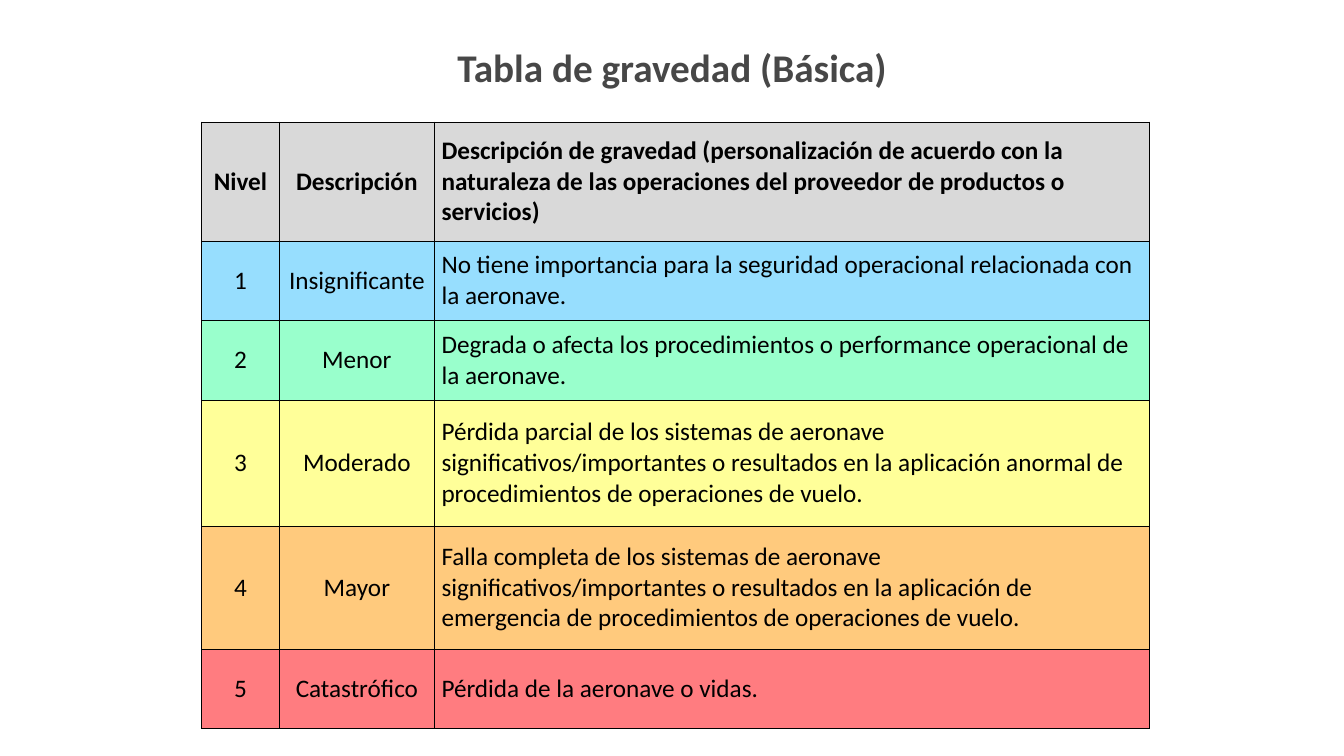
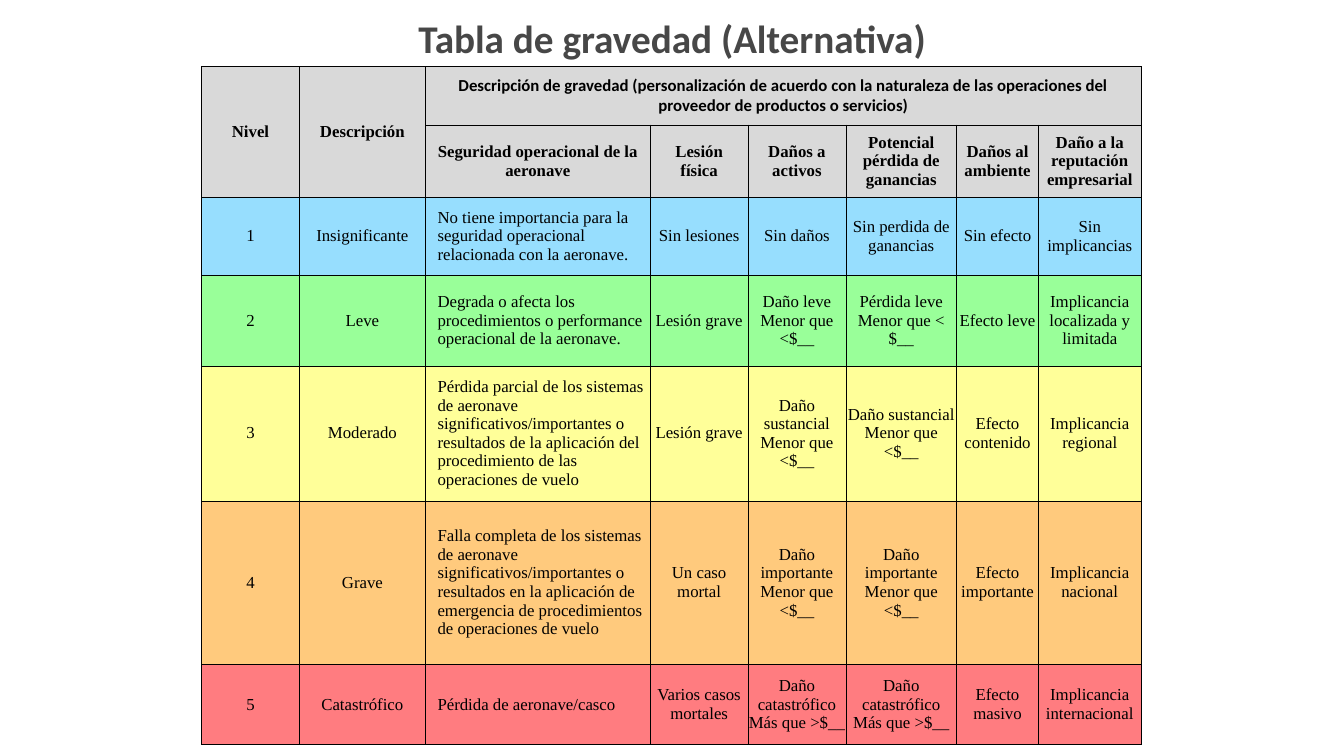
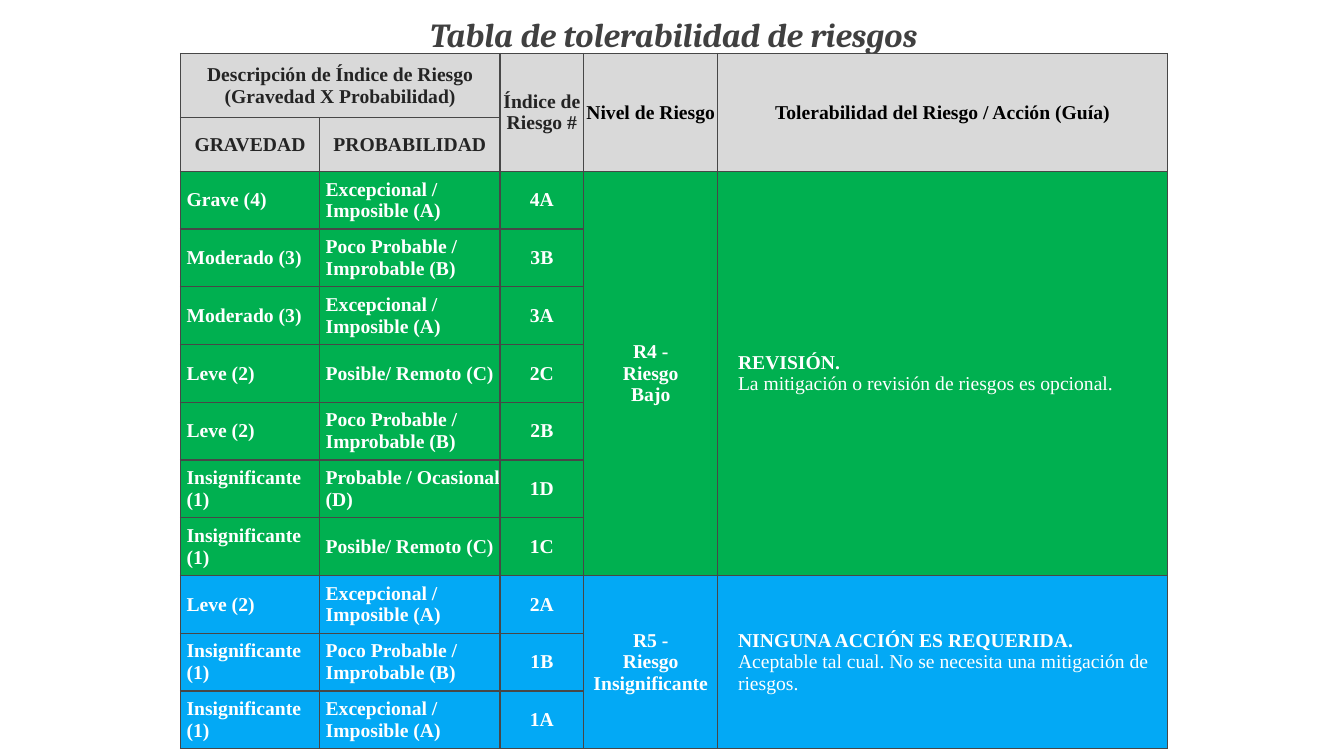
from pptx import Presentation
from pptx.dml.color import RGBColor
from pptx.enum.text import MSO_ANCHOR, MSO_AUTO_SIZE, PP_ALIGN
from pptx.oxml import parse_xml
from pptx.oxml.ns import nsdecls
from pptx.util import Inches, Pt

BLACK = RGBColor(0x00, 0x00, 0x00)
WHITE = RGBColor(0xFF, 0xFF, 0xFF)
TITLE_GRAY = RGBColor(0x47, 0x47, 0x47)
DARK_GRAY = RGBColor(0x40, 0x40, 0x40)
HEAD_TEXT = RGBColor(0x24, 0x24, 0x24)
HEAD_FILL = RGBColor(0xD9, 0xD9, 0xD9)
SKY = RGBColor(0x97, 0xDE, 0xFE)
MINT = RGBColor(0x99, 0xFF, 0xCC)
LIGHT_GREEN = RGBColor(0x99, 0xFF, 0x99)
YELLOW = RGBColor(0xFF, 0xFF, 0x99)
ORANGE = RGBColor(0xFF, 0xCA, 0x7D)
RED = RGBColor(0xFF, 0x7C, 0x80)
GREEN = RGBColor(0x00, 0xB0, 0x50)
BLUE = RGBColor(0x03, 0xA9, 0xF5)

prs = Presentation()
prs.slide_width = Inches(13.33)
prs.slide_height = Inches(7.5)


def add_titled_slide(title, left, top, width, height):
    s = prs.slides.add_slide(prs.slide_layouts[5])
    sp = s.shapes.title
    sp.left, sp.top = Inches(left), Inches(top)
    sp.width, sp.height = Inches(width), Inches(height)
    tf = sp.text_frame
    tf.text = title
    tf.auto_size = MSO_AUTO_SIZE.NONE
    p = tf.paragraphs[0]
    p.alignment = PP_ALIGN.CENTER
    p.font.name = "Calibri"
    p.font.size = Pt(28)
    p.font.bold = True
    p.font.color.rgb = TITLE_GRAY
    return s


def add_grid(s, left, top, widths, heights, rows, fills, font, size, indents, line_color, line_width):
    tbl = s.shapes.add_table(len(heights), len(widths), Inches(left), Inches(top),
                             Inches(sum(widths)), Inches(sum(heights))).table
    tbl.first_row = False
    tbl.horz_banding = False
    for col, width in zip(tbl.columns, widths):
        col.width = Inches(width)
    for row, height, texts, fill in zip(tbl.rows, heights, rows, fills):
        row.height = Inches(height)
        head = fill == HEAD_FILL
        for c, (cell, text) in enumerate(zip(row.cells, texts)):
            indent = 0 if head else indents.get(c, 0)
            cell.margin_left = Inches(indent)
            cell.margin_right = cell.margin_top = cell.margin_bottom = 0
            cell.vertical_anchor = MSO_ANCHOR.MIDDLE
            tcPr = cell._tc.get_or_add_tcPr()
            for side in "LRTB":
                tcPr.append(parse_xml(
                    f'<a:ln{side} {nsdecls("a")} w="{Pt(line_width)}"><a:solidFill>'
                    f'<a:srgbClr val="{line_color}"/></a:solidFill></a:ln{side}>'))
            cell.fill.solid()
            cell.fill.fore_color.rgb = fill
            p = cell.text_frame.paragraphs[0]
            p.text = text
            p.alignment = PP_ALIGN.LEFT if indent else PP_ALIGN.CENTER
            p.font.name = font
            p.font.size = Pt(size)
            p.font.bold = head
            p.font.color.rgb = BLACK
    return tbl


s = add_titled_slide("Tabla de gravedad (Básica)", 2.38, 0.38, 8.57, 0.57)
rows = [
    ("Nivel", "Descripción",
     "Descripción de gravedad (personalización de acuerdo con la naturaleza de las "
     "operaciones del proveedor de productos o servicios)"),
    ("1", "Insignificante",
     "No tiene importancia para la seguridad operacional relacionada con la aeronave."),
    ("2", "Menor",
     "Degrada o afecta los procedimientos o performance operacional de la aeronave."),
    ("3", "Moderado",
     "Pérdida parcial de los sistemas de aeronave significativos/importantes o resultados "
     "en la aplicación anormal de procedimientos de operaciones de vuelo."),
    ("4", "Mayor",
     "Falla completa de los sistemas de aeronave significativos/importantes o resultados "
     "en la aplicación de emergencia de procedimientos de operaciones de vuelo."),
    ("5", "Catastrófico", "Pérdida de la aeronave o vidas."),
]
tbl = add_grid(s, 2, 1.21, [0.77, 1.54, 7.09], [1.18, 0.79, 0.79, 1.25, 1.22, 0.79], rows,
               [HEAD_FILL, SKY, MINT, YELLOW, ORANGE, RED], "Calibri", 18, {2: 0.07}, BLACK, 0.5)
cell = tbl.cell(0, 2)
cell.margin_left = Inches(0.07)
cell.text_frame.paragraphs[0].alignment = PP_ALIGN.LEFT

s = add_titled_slide("Tabla de gravedad (Alternativa)", 2.38, 0.09, 8.57, 0.57)
rows = [
    ("Nivel", "Descripción",
     "Descripción de gravedad (personalización de acuerdo con la naturaleza de las "
     "operaciones del proveedor de productos o servicios)", "", "", "", "", ""),
    ("", "", "Seguridad operacional de la\naeronave", "Lesión\nfísica", "Daños a\nactivos",
     "Potencial\npérdida de\nganancias", "Daños al\nambiente",
     "Daño a la\nreputación\nempresarial"),
    ("1", "Insignificante",
     "No tiene importancia para la\nseguridad operacional relacionada con la aeronave.",
     "Sin lesiones", "Sin daños", "Sin perdida de ganancias", "Sin efecto", "Sin implicancias"),
    ("2", "Leve",
     "Degrada o afecta los procedimientos o performance operacional de la aeronave.",
     "Lesión grave", "Daño leve Menor que <$__", "Pérdida leve Menor que < $__",
     "Efecto leve", "Implicancia localizada y limitada"),
    ("3", "Moderado",
     "Pérdida parcial de los sistemas de aeronave significativos/importantes o resultados "
     "de la aplicación del procedimiento de las operaciones de vuelo",
     "Lesión grave", "Daño sustancial Menor que <$__", "Daño sustancial Menor que <$__",
     "Efecto contenido", "Implicancia regional"),
    ("4", "Grave",
     "Falla completa de los sistemas de aeronave significativos/importantes o resultados "
     "en la aplicación de\nemergencia de procedimientos de operaciones de vuelo",
     "Un caso mortal", "Daño importante Menor que <$__", "Daño importante Menor que <$__",
     "Efecto importante", "Implicancia nacional"),
    ("5", "Catastrófico", "Pérdida de aeronave/casco", "Varios casos mortales",
     "Daño catastrófico Más que >$__", "Daño catastrófico Más que >$__",
     "Efecto masivo", "Implicancia internacional"),
]
tbl = add_grid(s, 2, 0.66, [0.97, 1.25, 2.23, 0.97, 0.97, 1.1, 0.81, 1.02],
               [0.58, 0.72, 0.77, 0.9, 1.34, 1.62, 0.8], rows,
               [HEAD_FILL, HEAD_FILL, SKY, LIGHT_GREEN, YELLOW, ORANGE, RED],
               "Times New Roman", 12, {2: 0.12}, BLACK, 0.5)
tbl.cell(0, 0).merge(tbl.cell(1, 0))
tbl.cell(0, 1).merge(tbl.cell(1, 1))
tbl.cell(0, 2).merge(tbl.cell(0, 7))
tbl.cell(0, 2).text_frame.paragraphs[0].font.name = "Calibri"

s = add_titled_slide("Tabla de tolerabilidad de riesgos", 2.04, 0, 9.28, 0.41)
tf = s.shapes.title.text_frame
tf.vertical_anchor = MSO_ANCHOR.TOP
tf.margin_top = Inches(0.14)
p = tf.paragraphs[0]
p.font.name = "Cambria"
p.font.size = Pt(24)
p.font.italic = True
p.font.color.rgb = DARK_GRAY

EXCEPTIONAL = "Excepcional / Imposible (A)"
UNLIKELY = "Poco Probable / Improbable (B)"
POSSIBLE = "Posible/ Remoto (C)"
rows = [
    ("Descripción de Índice de Riesgo (Gravedad X Probabilidad)", "", "Índice de Riesgo #",
     "Nivel de Riesgo", "Tolerabilidad del Riesgo / Acción (Guía)"),
    ("GRAVEDAD", "PROBABILIDAD", "", "", ""),
    ("Grave (4)", EXCEPTIONAL, "4A", "R4 -\nRiesgo\nBajo", ""),
    ("Moderado (3)", UNLIKELY, "3B", "", ""),
    ("Moderado (3)", EXCEPTIONAL, "3A", "", ""),
    ("Leve (2)", POSSIBLE, "2C", "", ""),
    ("Leve (2)", UNLIKELY, "2B", "", ""),
    ("Insignificante (1)", "Probable / Ocasional (D)", "1D", "", ""),
    ("Insignificante (1)", POSSIBLE, "1C", "", ""),
    ("Leve (2)", EXCEPTIONAL, "2A", "R5 -\nRiesgo Insignificante", ""),
    ("Insignificante (1)", UNLIKELY, "1B", "", ""),
    ("Insignificante (1)", EXCEPTIONAL, "1A", "", ""),
]
heights = [0.64, 0.53] + [(6.9 - 0.64 - 0.53) / 10] * 10
tbl = add_grid(s, 1.79, 0.53, [1.38, 1.79, 0.83, 1.33, 4.46], heights, rows,
               [HEAD_FILL] * 2 + [GREEN] * 7 + [BLUE] * 3,
               "Times New Roman", 14, {0: 0.06, 1: 0.06, 4: 0.2}, TITLE_GRAY, 1)
for r, row in enumerate(tbl.rows):
    for c, cell in enumerate(row.cells):
        p = cell.text_frame.paragraphs[0]
        p.font.bold = True
        if r > 1:
            p.font.color.rgb = WHITE
        elif c < 3:
            p.font.color.rgb = HEAD_TEXT

tbl.cell(0, 0).merge(tbl.cell(0, 1))
for c in (2, 3, 4):
    tbl.cell(0, c).merge(tbl.cell(1, c))
actions = [
    (2, 8, "REVISIÓN.", "La mitigación o revisión de riesgos es opcional."),
    (9, 11, "NINGUNA ACCIÓN ES REQUERIDA.",
     "Aceptable tal cual. No se necesita una mitigación de riesgos."),
]
for first, last, action, guide in actions:
    for c in (3, 4):
        tbl.cell(first, c).merge(tbl.cell(last, c))
    p = tbl.cell(first, 4).text_frame.paragraphs[0]
    p.add_run().text = action
    p.add_line_break()
    run = p.add_run()
    run.text = guide
    run.font.bold = False

prs.save("out.pptx")
